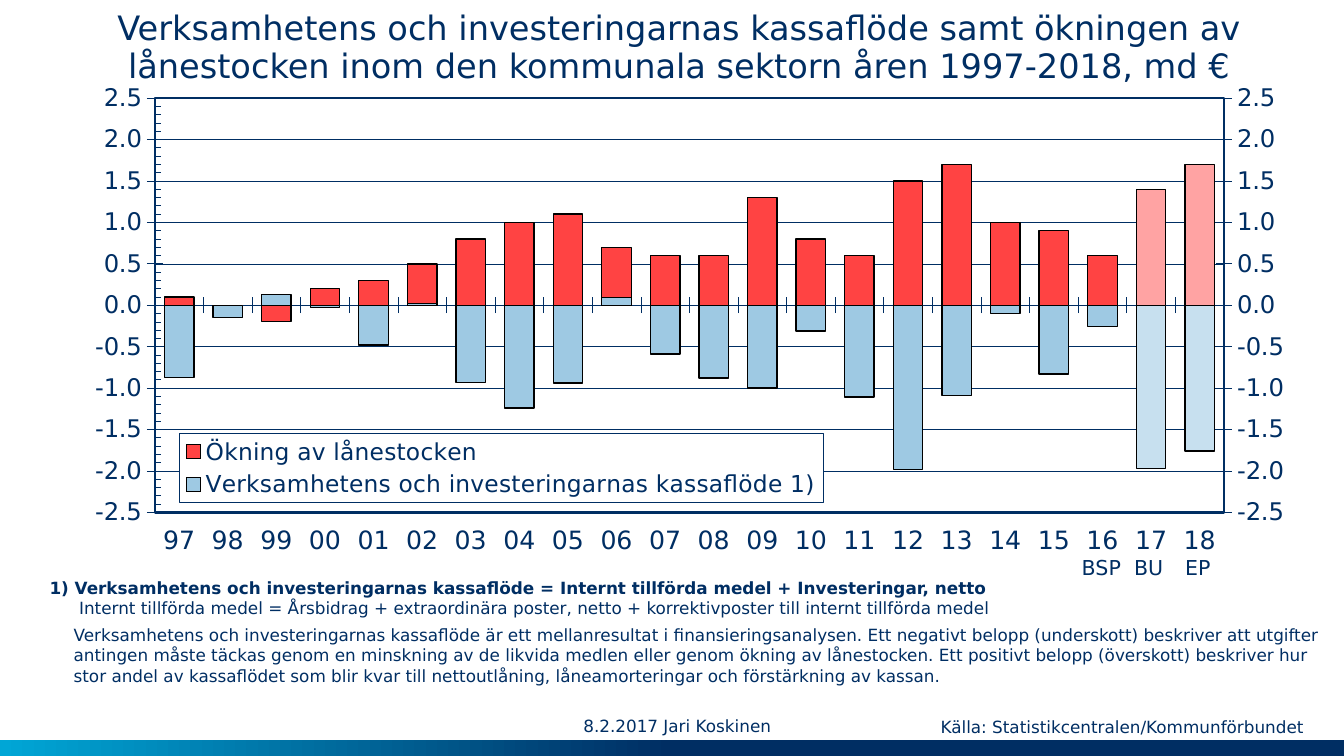
from copy import deepcopy

from lxml import etree
from pptx import Presentation
from pptx.chart.data import CategoryChartData
from pptx.dml.color import RGBColor
from pptx.enum import chart as ch, dml, shapes, text
from pptx.oxml.ns import qn
from pptx.util import Inches, Pt

NAVY = RGBColor(0x00, 0x2E, 0x63)
CYAN = RGBColor(0x00, 0xA6, 0xD6)
RED = RGBColor(0xFF, 0x43, 0x43)
PALE_RED = RGBColor(0xFF, 0xA3, 0xA3)
BLUE = RGBColor(0x9E, 0xC9, 0xE3)
PALE_BLUE = RGBColor(0xC7, 0xE0, 0xEF)
WHITE = RGBColor(0xFF, 0xFF, 0xFF)
BLACK = RGBColor(0, 0, 0)
FONT = "DejaVu Sans"

YEARS = [f"{y % 100:02d}" for y in range(1997, 2019)]
FORECAST = (20, 21)
LOANS = [0.1, 0, -0.2, 0.2, 0.3, 0.5, 0.8, 1, 1.1, 0.7, 0.6,
         0.6, 1.3, 0.8, 0.6, 1.5, 1.7, 1, 0.9, 0.6, 1.4, 1.7]
CASH_FLOW = [-0.87, -0.15, 0.13, -0.03, -0.48, 0.02, -0.93, -1.24, -0.94, 0.09, -0.59,
             -0.88, -1, -0.31, -1.11, -1.98, -1.09, -0.1, -0.83, -0.26, -1.97, -1.76]


def set_font(font, size, bold=False):
    font.name, font.size, font.bold = FONT, Pt(size), bold
    font.color.rgb = NAVY


def set_line(line, color, width):
    line.color.rgb = color
    line.width = Pt(width)


def add_layout(parent, index, x, y, w, h, inner=False):
    """Place a chart part by fractions of the chart area."""
    for old in parent.findall(qn("c:layout")):
        parent.remove(old)
    layout = etree.Element(qn("c:layout"))
    manual = etree.SubElement(layout, qn("c:manualLayout"))
    items = [("layoutTarget", "inner")] if inner else []
    items += [("xMode", "edge"), ("yMode", "edge"), ("x", x), ("y", y), ("w", w), ("h", h)]
    for tag, val in items:
        etree.SubElement(manual, qn(f"c:{tag}")).set("val", str(val))
    parent.insert(index, layout)


def add_frame(place, width, fill=None):
    """Give a chart part a navy outline and, if wanted, a fill."""
    sp_pr = etree.Element(qn("c:spPr"))
    if fill is None:
        etree.SubElement(sp_pr, qn("a:noFill"))
    else:
        solid = etree.SubElement(sp_pr, qn("a:solidFill"))
        etree.SubElement(solid, qn("a:srgbClr")).set("val", str(fill))
    ln = etree.SubElement(sp_pr, qn("a:ln"), w=str(Pt(width)))
    solid = etree.SubElement(ln, qn("a:solidFill"))
    etree.SubElement(solid, qn("a:srgbClr")).set("val", str(NAVY))
    place(sp_pr)


def add_right_axis(plot_area):
    """Move the second series to its own bar group with an axis on the right."""
    bars, cat, val = (plot_area.find(qn(f"c:{t}")) for t in ("barChart", "catAx", "valAx"))
    bars2, cat2, val2 = deepcopy(bars), deepcopy(cat), deepcopy(val)
    bars.remove(bars.findall(qn("c:ser"))[1])
    bars2.remove(bars2.findall(qn("c:ser"))[0])
    ids = {cat.find(qn("c:axId")).get("val"): "5001", val.find(qn("c:axId")).get("val"): "5002"}
    for part in (bars2, cat2, val2):
        for el in part.iter(qn("c:axId"), qn("c:crossAx")):
            el.set("val", ids[el.get("val")])
    cat2.find(qn("c:delete")).set("val", "1")
    val2.remove(val2.find(qn("c:majorGridlines")))
    val2.find(qn("c:axPos")).set("val", "r")
    val2.find(qn("c:crosses")).set("val", "max")
    val2.find(qn("c:minorTickMark")).set("val", "none")
    bars.addnext(bars2)
    val.addnext(val2)
    val2.addnext(cat2)


class Deck:
    def __init__(self, prs):
        self.s = prs.slides.add_slide(prs.slide_layouts[5])

    def title(self, x, y, w, h, words, size):
        sp = self.s.shapes.title
        sp.left, sp.top, sp.width, sp.height = map(Inches, (x, y, w, h))
        tf = sp.text_frame
        tf.margin_left = tf.margin_right = tf.margin_top = tf.margin_bottom = 0
        tf.vertical_anchor = text.MSO_ANCHOR.TOP
        tf.auto_size = text.MSO_AUTO_SIZE.SHAPE_TO_FIT_TEXT
        p = tf.paragraphs[0]
        p.alignment, p.line_spacing = text.PP_ALIGN.CENTER, 0.95
        self.run(p, words, size)

    def run(self, p, words, size, bold=False):
        r = p.add_run()
        r.text = words
        set_font(r.font, size, bold)

    def text(self, x, y, w, h, lines, size=9, wrap=True, flush=False):
        """Each line is (words, bold, left indent in inches)."""
        tf = self.s.shapes.add_textbox(*map(Inches, (x, y, w, h))).text_frame
        tf.word_wrap = wrap
        if flush:
            tf.margin_left = tf.margin_right = tf.margin_top = tf.margin_bottom = 0
            tf.vertical_anchor = text.MSO_ANCHOR.MIDDLE
        else:
            tf.auto_size = text.MSO_AUTO_SIZE.SHAPE_TO_FIT_TEXT
        for i, (words, bold, indent) in enumerate(lines):
            p = tf.add_paragraph() if i else tf.paragraphs[0]
            if indent:
                p._p.get_or_add_pPr().set("marL", str(Inches(indent)))
            self.run(p, words, size, bold)

    def gradient_bar(self, x, y, w, h):
        sp = self.s.shapes.add_shape(shapes.MSO_SHAPE.RECTANGLE, *map(Inches, (x, y, w, h)))
        sp.shadow.inherit = False
        sp.line.fill.background()
        sp.fill.gradient()
        sp.fill.gradient_angle = 180
        for stop, pos, color in zip(sp.fill.gradient_stops, (0.5, 1), (NAVY, CYAN)):
            stop.position, stop.color.rgb = pos, color

    def chart(self, x, y, w, h):
        data = CategoryChartData()
        data.categories = YEARS
        data.add_series("Ökning av lånestocken", LOANS)
        data.add_series("Verksamhetens och investeringarnas kassaflöde 1)", CASH_FLOW)
        chart = self.s.shapes.add_chart(ch.XL_CHART_TYPE.COLUMN_CLUSTERED,
                                        *map(Inches, (x, y, w, h)), data).chart
        chart.has_title = False
        set_font(chart.font, 13)

        # Columns, with paler forecast years
        plot = chart.plots[0]
        plot.gap_width, plot.vary_by_categories = 65, False
        for series, color, pale in zip(plot.series, (RED, BLUE), (PALE_RED, PALE_BLUE)):
            series.invert_if_negative = False
            points = [(series.points[i].format, pale) for i in FORECAST]
            for fmt, fill in [(series.format, color)] + points:
                fmt.fill.solid()
                fmt.fill.fore_color.rgb = fill
                set_line(fmt.line, BLACK, 0.75)

        # Axes
        cat, val = chart.category_axis, chart.value_axis
        for axis, size in ((cat, 13.5), (val, 13)):
            set_font(axis.tick_labels.font, size)
            set_line(axis.format.line, NAVY, 0.3)
            axis.major_tick_mark = ch.XL_TICK_MARK.CROSS
        cat.tick_label_position = ch.XL_TICK_LABEL_POSITION.LOW
        val.minimum_scale, val.maximum_scale = -2.5, 2.5
        val.major_unit, val.minor_unit = 0.5, 0.1
        val.minor_tick_mark = ch.XL_TICK_MARK.INSIDE
        val.tick_labels.number_format = "0.0"
        val.tick_labels.number_format_is_linked = False
        val.has_major_gridlines = True
        grid = val.major_gridlines.format.line
        set_line(grid, NAVY, 0.25)
        grid.dash_style = dml.MSO_LINE.ROUND_DOT

        # Legend inside the plot, with a thin frame
        chart.has_legend = True
        legend = chart.legend
        legend.position = ch.XL_LEGEND_POSITION.RIGHT
        legend.include_in_layout = False
        set_font(legend.font, 12.5)
        add_layout(legend._element, 1, 0.08, 0.71, 0.53, 0.14)
        add_frame(legend._element.find(qn("c:txPr")).addprevious, 0.25, WHITE)

        # Plot area
        area = chart._chartSpace.chart.plotArea
        add_layout(area, 0, 0.06, 0.03, 0.88, 0.84, inner=True)
        add_right_axis(area)
        add_frame(area.append, 1.25)


def main():
    prs = Presentation()
    prs.slide_width = Inches(10)
    prs.slide_height = prs.slide_width * 9 // 16
    deck = Deck(prs)

    # Bottom band, chart and title
    deck.gradient_bar(0, 5.51, 10, 0.12)
    deck.chart(0.61, 0.62, 9.04, 3.67)
    deck.title(0.27, 0.07, 9.57, 0.58,
               "Verksamhetens och investeringarnas kassaflöde samt ökningen av lånestocken "
               "inom den kommunala sektorn åren 1997-2018, md €", 18)

    # Status of the last three years
    for x, w, label in ((7.95, 0.51, "BSP"), (8.34, 0.42, "BU"), (8.72, 0.39, "EP")):
        deck.text(x, 4.08, w, 0.29, [(label, False, 0)], size=11, wrap=False)

    # Explanations
    deck.text(0.27, 4.25, 7.85, 0.4, [
        ("1) Verksamhetens och investeringarnas kassaflöde = Internt tillförda medel + "
         "Investeringar, netto", True, 0),
        ("Internt tillförda medel = Årsbidrag + extraordinära poster, netto + "
         "korrektivposter till internt tillförda medel", False, 0.22)])
    deck.text(0.45, 4.6, 9.53, 0.56, [
        ("Verksamhetens och investeringarnas kassaflöde är ett mellanresultat i "
         "finansieringsanalysen. Ett negativt belopp (underskott) beskriver att utgifter "
         "antingen måste täckas genom en minskning av de likvida medlen eller genom ökning av "
         "lånestocken. Ett positivt belopp (överskott) beskriver hur stor andel av kassaflödet "
         "som blir kvar till nettoutlåning, låneamorteringar och förstärkning av kassan.",
         False, 0)])

    # Date and source
    deck.text(4.34, 5.29, 1.72, 0.22, [("8.2.2017 Jari Koskinen", False, 0)], flush=True)
    deck.text(6.9, 5.28, 3.01, 0.25,
              [("Källa: Statistikcentralen/Kommunförbundet", False, 0)])
    prs.save("out.pptx")


if __name__ == "__main__":
    main()
